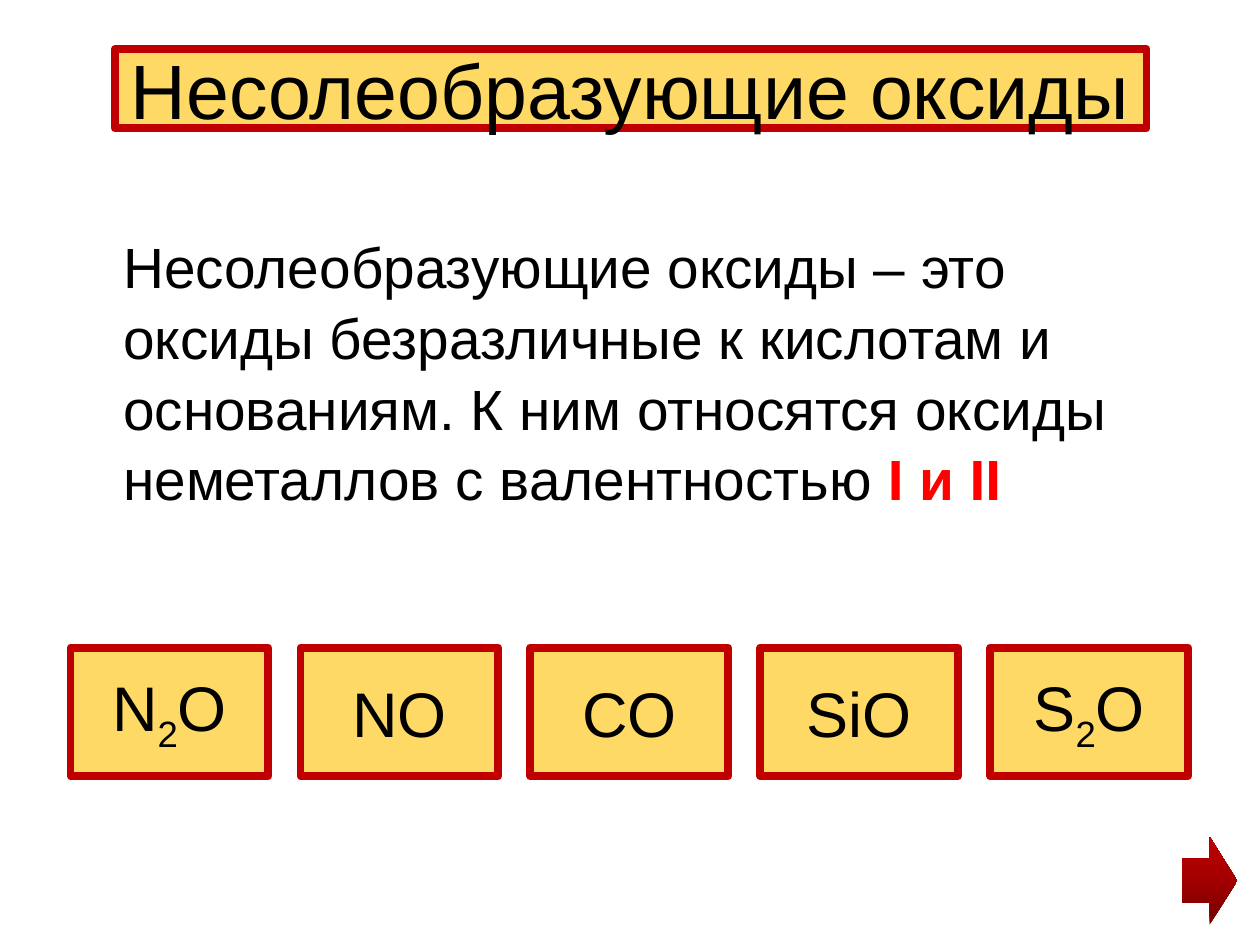
from copy import deepcopy

from lxml import etree
from pptx import Presentation
from pptx.dml.color import RGBColor
from pptx.enum.shapes import MSO_SHAPE as SHAPE
from pptx.enum.text import MSO_ANCHOR as ANCHOR, PP_ALIGN as ALIGN
from pptx.oxml.ns import qn
from pptx.util import Inches, Pt

BLACK, RED, DARK_RED, AMBER = "000000", "FF0000", "C00000", "FFC000"


def color(value):
    return RGBColor.from_string(value)


def add_run(p, text, size=36, fill=BLACK, bold=False, baseline=0):
    r = p.add_run()
    r.text = text
    r.font.name = "Arial"
    r.font.size = Pt(size)
    r.font.bold = bold
    r.font.color.rgb = color(fill)
    if baseline:
        r.font._element.set("baseline", str(baseline * 1000))


def add_frame(shapes, box, parts, size):
    s = shapes.add_shape(SHAPE.RECTANGLE, *map(Inches, box))
    s.shadow.inherit = False
    s.fill.solid()
    s.fill.fore_color.rgb = color(AMBER)
    fill = s._element.spPr.find(qn("a:solidFill"))
    etree.SubElement(fill[0], qn("a:alpha")).set("val", "60000")
    s.line.color.rgb = color(DARK_RED)
    s.line.width = Pt(4.5)
    s.text_frame.vertical_anchor = ANCHOR.MIDDLE
    p = s.text_frame.paragraphs[0]
    p.alignment = ALIGN.CENTER
    for part in parts:
        add_run(p, part, size=size, baseline=-25 if part.isdigit() else 0)


def add_definition(shapes, box):
    tf = shapes.add_textbox(*map(Inches, box)).text_frame
    tf.word_wrap = True
    tf.margin_top = Inches(0.07)
    p = tf.paragraphs[0]
    p.line_spacing = 1.04
    p._p.get_or_add_pPr().set("marL", str(Inches(0.38)))
    add_run(p, "Несолеобразующие оксиды – это оксиды безразличные к кислотам "
               "и основаниям. К ним относятся оксиды неметаллов с валентностью ",
            size=32.4)
    add_run(p, "I и II", size=32.4, fill=RED, bold=True)


def add_formulas(shapes, box, formulas):
    left, top, width, height = box
    cell = 1.57
    step = (width - cell) / (len(formulas) - 1)
    group = shapes.add_group_shape()
    for i, parts in enumerate(formulas):
        add_frame(group.shapes, (left + i * step, top, cell, height), parts, 36)


def add_next_arrow(shapes, box):
    s = shapes.add_shape(SHAPE.RIGHT_ARROW, *map(Inches, box))
    s.shadow.inherit = False
    s.line.fill.background()
    s.fill.gradient()
    s.fill.gradient_angle = 90
    first = s._element.spPr.find(qn("a:gradFill")).find(qn("a:gsLst"))[0]
    first.addnext(deepcopy(first))
    stops = [(0, "720000"), (0.5, "A20000"), (1, DARK_RED)]
    for stop, (position, value) in zip(s.fill.gradient_stops, stops):
        stop.position = position
        stop.color.rgb = color(value)


def main():
    prs = Presentation()
    prs.slide_width, prs.slide_height = Inches(10), Inches(7.5)
    shapes = prs.slides.add_slide(prs.slide_layouts[6]).shapes
    add_definition(shapes, (0.5, 1.75, 9, 3.56))
    add_frame(shapes, (0.91, 0.39, 8.19, 0.63), ["Несолеобразующие оксиды"], 44)
    formulas = [["N", "2", "O"], ["NO"], ["СO"], ["SiO"], ["S", "2", "O"]]
    add_formulas(shapes, (0.56, 5.14, 8.87, 1.02), formulas)
    add_next_arrow(shapes, (9.38, 6.64, 0.44, 0.7))
    prs.save("out.pptx")


if __name__ == "__main__":
    main()
